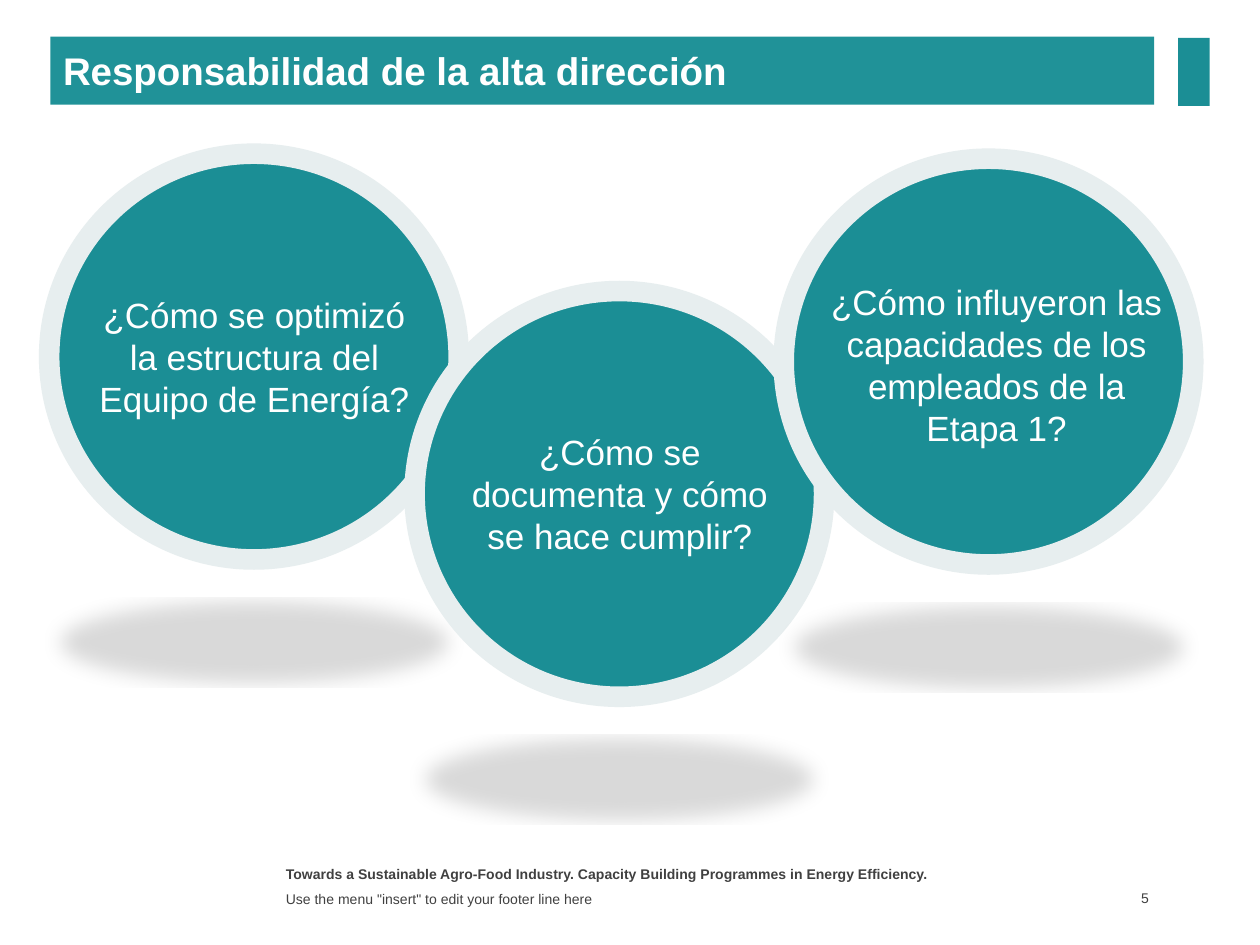
"""Build the slide on top management responsibility with three question circles."""
from lxml.etree import SubElement
from pptx import Presentation
from pptx.dml.color import RGBColor
from pptx.enum.shapes import MSO_SHAPE as Shape
from pptx.enum.text import MSO_ANCHOR as Anchor, PP_ALIGN as Align
from pptx.oxml.ns import qn
from pptx.util import Inches, Pt

TITLE = "Responsabilidad de la alta dirección"
QUESTIONS = [
    ("¿Cómo se optimizó la estructura del Equipo de Energía?", (0.39, 1.22), (0.6, 2.28), 1.11),
    ("¿Cómo se documenta y cómo se hace cumplir?", (3.29, 2.31), (3.5, 3.37), 1.11),
    ("¿Cómo influyeron las capacidades de los empleados de la Etapa 1?",
     (6.22, 1.26), (6.49, 2.18), 1.45),
]
PROGRAMME = "Towards a Sustainable Agro-Food Industry. Capacity Building Programmes in Energy Efficiency."
FOOTER = 'Use the menu "insert" to edit your footer line here'
PAGE = "5"

THEME = {
    "font": "Arial", "bar": "209298", "teal": "1B8E95", "ring": "E7EEEF",
    "white": "FFFFFF", "grey": "404040", "shadow": "000000",
    "title": 22, "question": 20, "footer": 8, "ring_width": 11.75,
}
CIRCLE = (3.25, 3.22)
QUESTION_WIDTH = 2.84


def color(name):
    return RGBColor.from_string(THEME[name])


def box(left, top, width, height):
    return [Inches(v) for v in (left, top, width, height)]


def fill(sp, name):
    sp.fill.solid()
    sp.fill.fore_color.rgb = color(name)


def write(sp, text, size, ink, bold=False, align=Align.LEFT, anchor=Anchor.TOP):
    tf = sp.text_frame
    tf.word_wrap = True
    tf.vertical_anchor = anchor
    p = tf.paragraphs[0]
    p.text = text
    p.alignment = align
    p.font.name = THEME["font"]
    p.font.size = Pt(THEME[size])
    p.font.bold = bold
    p.font.color.rgb = color(ink)
    return tf


def add_floor_shadow(sp):
    effects = SubElement(sp.fill._xPr, qn("a:effectLst"))
    shadow = SubElement(effects, qn("a:outerShdw"), blurRad=str(Pt(12)), dist=str(Pt(25)),
                        dir="5400000", sx="90000", sy="-19000", rotWithShape="0")
    tint = SubElement(shadow, qn("a:srgbClr"), val=THEME["shadow"])
    SubElement(tint, qn("a:alpha"), val="15000")


def add_question(s, text, circle_at, text_at, height):
    group = s.shapes.add_group_shape()
    sp = group.shapes.add_shape(Shape.OVAL, *box(*circle_at, *CIRCLE))
    fill(sp, "teal")
    sp.line.color.rgb = color("ring")
    sp.line.width = Pt(THEME["ring_width"])
    add_floor_shadow(sp)
    label = group.shapes.add_textbox(*box(*text_at, QUESTION_WIDTH, height))
    write(label, text, "question", "white", align=Align.CENTER)


def main():
    prs = Presentation()
    prs.slide_width, prs.slide_height = Inches(10), Inches(7.5)
    s = prs.slides.add_slide(prs.slide_layouts[5])

    title = s.shapes.title
    title.left, title.top, title.width, title.height = box(0.4, 0.29, 8.76, 0.54)
    fill(title, "bar")
    write(title, TITLE, "title", "white", bold=True, anchor=Anchor.MIDDLE)

    accent = s.shapes.add_shape(Shape.RECTANGLE, *box(9.35, 0.3, 0.25, 0.54))
    fill(accent, "teal")
    accent.line.fill.background()
    accent.shadow.inherit = False

    for question in QUESTIONS:
        add_question(s, *question)

    programme = s.shapes.add_textbox(*box(2.17, 6.82, 5.5, 0.21))
    write(programme, PROGRAMME, "footer", "grey", bold=True)
    footer = s.shapes.add_textbox(*box(2.17, 7.04, 5.5, 0.19))
    write(footer, FOOTER, "footer", "grey", anchor=Anchor.MIDDLE)
    page = s.shapes.add_textbox(*box(8.6, 7.03, 0.56, 0.2))
    tf = write(page, PAGE, "footer", "grey", align=Align.RIGHT, anchor=Anchor.MIDDLE)
    tf.margin_right = Inches(0.04)

    prs.save("out.pptx")


if __name__ == "__main__":
    main()
